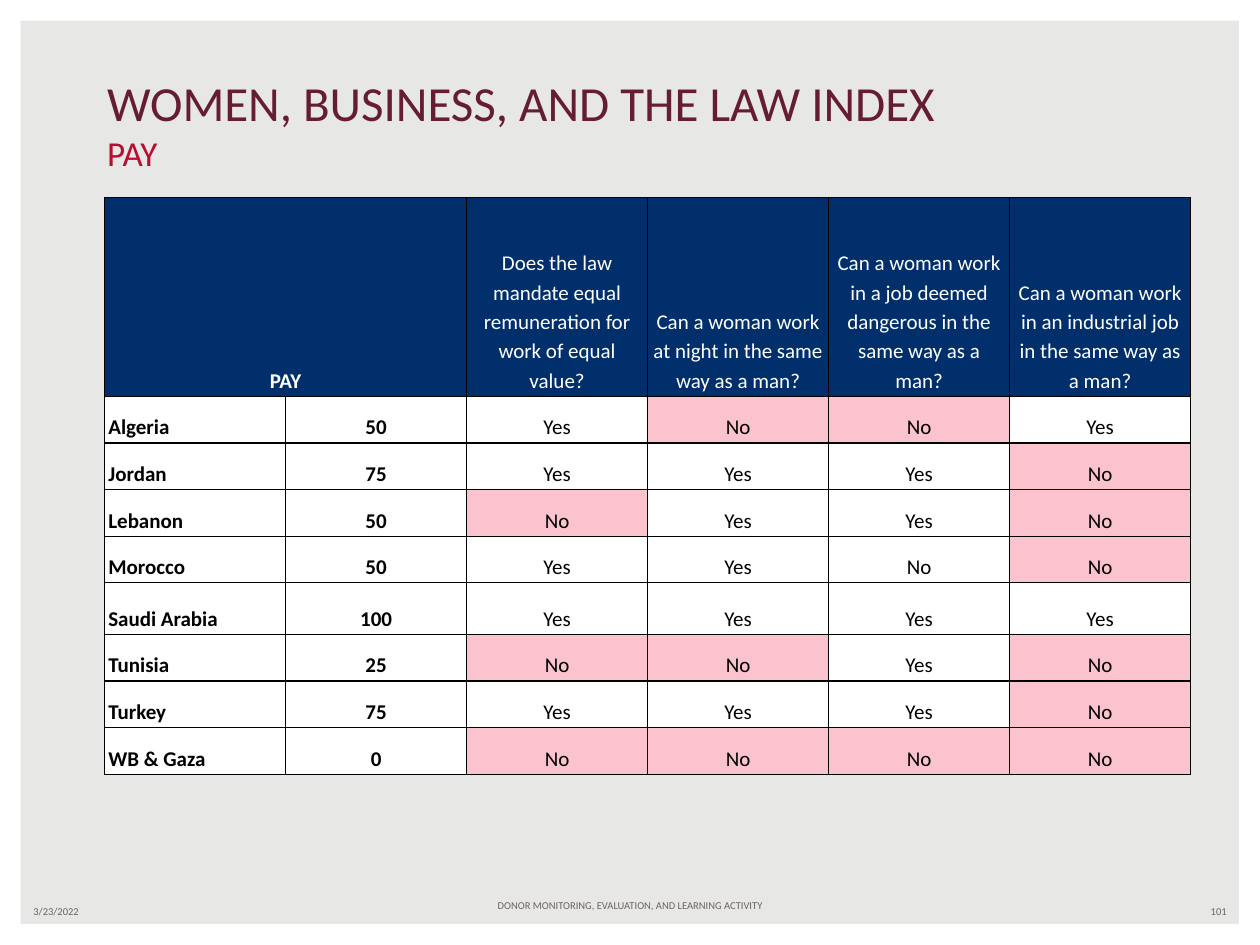
from copy import deepcopy

from lxml import etree
from pptx import Presentation
from pptx.dml.color import RGBColor
from pptx.enum.shapes import MSO_SHAPE
from pptx.enum.text import MSO_ANCHOR as ANCHOR, MSO_AUTO_SIZE as FIT, PP_ALIGN as ALIGN
from pptx.oxml.ns import qn
from pptx.util import Emu, Pt

PX_PER_INCH = 300
FONT = "Calibri"
BACKGROUND, WHITE, BLACK = "E7E7E5", "FFFFFF", "000000"
NAVY, PINK = "002F6C", "FBC3CE"
MAROON, RED, GREY = "651D32", "BA0C2F", "6C6463"

HEADERS = [
    "Does the law mandate equal remuneration for work of equal value?",
    "Can a woman work at night in the same way as a man?",
    "Can a woman work in a job deemed dangerous in the same way as a man?",
    "Can a woman work in an industrial job in the same way as a man?",
]
COUNTRIES = [
    ("Algeria", "50", "Yes", "No", "No", "Yes"),
    ("Jordan", "75", "Yes", "Yes", "Yes", "No"),
    ("Lebanon", "50", "No", "Yes", "Yes", "No"),
    ("Morocco", "50", "Yes", "Yes", "No", "No"),
    ("Saudi Arabia", "100", "Yes", "Yes", "Yes", "Yes"),
    ("Tunisia", "25", "No", "No", "Yes", "No"),
    ("Turkey", "75", "Yes", "Yes", "Yes", "No"),
    ("WB & Gaza", "0", "No", "No", "No", "No"),
]
UNSHADED_NO = {("Morocco", 4)}
COL_WIDTH = 431
ROW_HEIGHTS = [474] + [123 if row[0] == "Saudi Arabia" else 111 for row in COUNTRIES]


def px(n):
    return Emu(round(n * 914400 / PX_PER_INCH))


def rgb(color):
    return RGBColor.from_string(color)


class Deck:
    def __init__(self, prs):
        self.slide = prs.slides.add_slide(prs.slide_layouts[5])
        self.fill(self.slide.background, BACKGROUND)

    def fill(self, target, color):
        target.fill.solid()
        target.fill.fore_color.rgb = rgb(color)

    def run(self, p, text, size, color, bold=False):
        r = p.add_run()
        r.text = text
        r.font.name, r.font.size, r.font.bold = FONT, Pt(size), bold
        r.font.color.rgb = rgb(color)
        return r

    def frame(self, x, y, w, h, thickness):
        sp = self.slide.shapes.add_shape(MSO_SHAPE.FRAME, px(x), px(y), px(w), px(h))
        sp.adjustments[0] = thickness
        sp.shadow.inherit = False
        self.fill(sp, WHITE)
        sp.line.fill.background()

    def title(self, x, y, w, h, heading, subheading):
        sp = self.slide.shapes.title
        sp.left, sp.top, sp.width, sp.height = px(x), px(y), px(w), px(h)
        tf = sp.text_frame
        tf.auto_size, tf.vertical_anchor = FIT.NONE, ANCHOR.BOTTOM
        p = tf.paragraphs[0]
        p.alignment = ALIGN.LEFT
        r = self.run(p, heading, 28, MAROON)
        p.add_line_break()
        # The break needs the heading's size, or it takes the layout's larger one
        p._p.find(qn("a:br")).append(deepcopy(r._r.find(qn("a:rPr"))))
        self.run(p, subheading, 20, RED)

    def footer(self, x, y, w, h, text, align, anchor=ANCHOR.MIDDLE):
        tf = self.slide.shapes.add_textbox(px(x), px(y), px(w), px(h)).text_frame
        tf.word_wrap, tf.vertical_anchor = True, anchor
        p = tf.paragraphs[0]
        p.alignment = align
        self.run(p, text, 6, GREY)

    def table(self, x, y, col_width, cols, row_heights):
        graphic = self.slide.shapes.add_table(
            len(row_heights), cols, px(x), px(y),
            px(col_width * cols), px(sum(row_heights)))
        table = graphic.table
        table.first_row = table.horz_banding = False
        for col in table.columns:
            col.width = px(col_width)
        for row, height in zip(table.rows, row_heights):
            row.height = px(height)
        for cell in table.iter_cells():
            self.borders(cell)
        return table

    def borders(self, cell):
        tc_pr = cell._tc.get_or_add_tcPr()
        for side in ("a:lnL", "a:lnR", "a:lnT", "a:lnB"):
            ln = etree.SubElement(tc_pr, qn(side), w=str(Pt(0.75)))
            solid = etree.SubElement(ln, qn("a:solidFill"))
            etree.SubElement(solid, qn("a:srgbClr"), val=BLACK)

    def cell(self, cell, text, fill, color=BLACK, bold=False, align=ALIGN.CENTER):
        self.fill(cell, fill)
        cell.vertical_anchor = ANCHOR.BOTTOM
        cell.margin_left = cell.margin_right = px(9)
        cell.margin_top = cell.margin_bottom = px(6)
        p = cell.text_frame.paragraphs[0]
        p.alignment, p.line_spacing = align, 1.15
        self.run(p, text, 12, color, bold)


def main():
    prs = Presentation()
    prs.slide_width, prs.slide_height = px(3000), px(2250)
    deck = Deck(prs)
    deck.frame(0, 0, 3000, 2250, 0.022)
    deck.title(225, 156, 2550, 273, "WOMEN, BUSINESS, AND THE LAW INDEX", "PAY")

    table = deck.table(249, 470, COL_WIDTH, 2 + len(HEADERS), ROW_HEIGHTS)
    table.cell(0, 0).merge(table.cell(0, 1))
    deck.cell(table.cell(0, 0), "PAY", NAVY, WHITE, bold=True)
    for c, question in enumerate(HEADERS, 2):
        deck.cell(table.cell(0, c), question, NAVY, WHITE)
    for r, country in enumerate(COUNTRIES, 1):
        for c, text in enumerate(country):
            shaded = text == "No" and (country[0], c) not in UNSHADED_NO
            deck.cell(table.cell(r, c), text, PINK if shaded else WHITE,
                      bold=c < 2, align=ALIGN.CENTER if c else ALIGN.LEFT)

    deck.footer(50, 2140, 700, 60, "3/23/2022", ALIGN.LEFT)
    deck.footer(1025, 2125, 950, 90,
                "DONOR MONITORING, EVALUATION, AND LEARNING ACTIVITY",
                ALIGN.CENTER, ANCHOR.TOP)
    deck.footer(2250, 2140, 700, 60, "101", ALIGN.RIGHT)
    prs.save("out.pptx")


if __name__ == "__main__":
    main()
